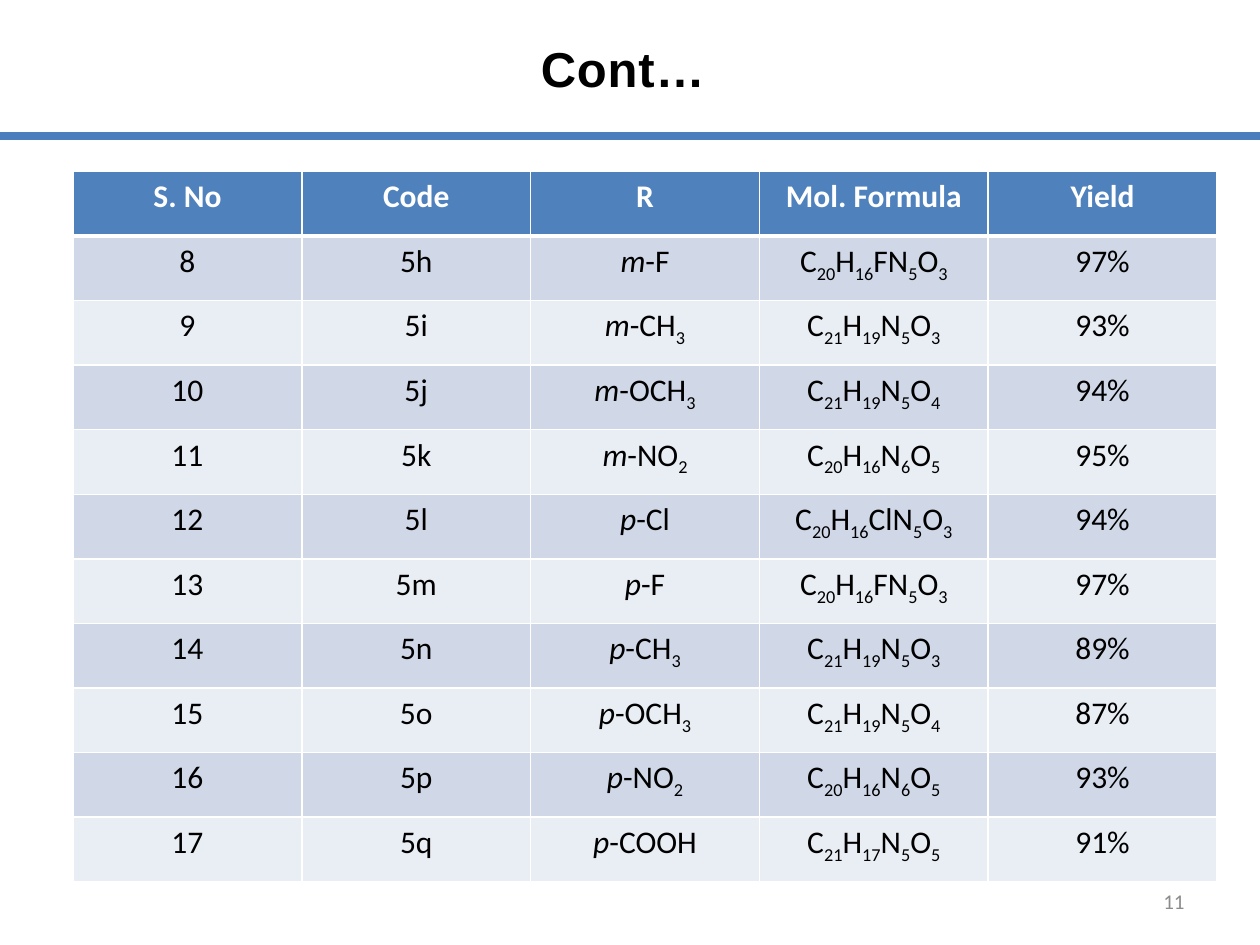
from itertools import groupby

from lxml import etree
from pptx import Presentation
from pptx.dml.color import RGBColor
from pptx.enum.shapes import MSO_CONNECTOR
from pptx.enum.text import MSO_ANCHOR, PP_ALIGN
from pptx.oxml import parse_xml
from pptx.oxml.ns import nsdecls, qn
from pptx.util import Inches, Pt

CENTER, RIGHT = PP_ALIGN.CENTER, PP_ALIGN.RIGHT
TOP, MIDDLE = MSO_ANCHOR.TOP, MSO_ANCHOR.MIDDLE
STRAIGHT = MSO_CONNECTOR.STRAIGHT

BLACK, WHITE, GREY = "000000", "FFFFFF", "8C8C8C"
RULE_BLUE, HEADER_BLUE = "4B7EBC", "4F81BD"
BANDS = ("D0D8E8", "E9EDF4")

HEADINGS = ("S. No", "Code", "R", "Mol. Formula", "Yield")
FIRST_NUMBER = 8
# Code, ring position, substituent, molecular formula, yield
COMPOUNDS = (
    ("5h", "m", "-F", "C20H16FN5O3", "97%"),
    ("5i", "m", "-CH3", "C21H19N5O3", "93%"),
    ("5j", "m", "-OCH3", "C21H19N5O4", "94%"),
    ("5k", "m", "-NO2", "C20H16N6O5", "95%"),
    ("5l", "p", "-Cl", "C20H16ClN5O3", "94%"),
    ("5m", "p", "-F", "C20H16FN5O3", "97%"),
    ("5n", "p", "-CH3", "C21H19N5O3", "89%"),
    ("5o", "p", "-OCH3", "C21H19N5O4", "87%"),
    ("5p", "p", "-NO2", "C20H16N6O5", "93%"),
    ("5q", "p", "-COOH", "C21H17N5O5", "91%"),
)


def rgb(color):
    return RGBColor.from_string(color)


def add_run(paragraph, text, size, color, font="Calibri", bold=False,
            italic=False, subscript=False):
    run = paragraph.add_run()
    run.text = text
    run.font.size, run.font.name = Pt(size), font
    run.font.bold, run.font.italic = bold, italic
    run.font.color.rgb = rgb(color)
    if subscript:
        run.font._element.set("baseline", "-25000")
    return run


def add_formula(paragraph, formula):
    """Write a formula with its digits as subscripts."""
    for is_digit, letters in groupby(formula, str.isdigit):
        add_run(paragraph, "".join(letters), 18, BLACK, subscript=is_digit)


def add_text_line(slide, box, align, anchor):
    """Add a text box and return its one paragraph."""
    frame = slide.shapes.add_textbox(*map(Inches, box)).text_frame
    frame.word_wrap = True
    frame.vertical_anchor = anchor
    frame.paragraphs[0].alignment = align
    return frame.paragraphs[0]


def add_title(slide, box):
    run = add_run(add_text_line(slide, box, CENTER, TOP), "Cont… ", 28, BLACK,
                  font="Arial", bold=True)
    properties = run.font._element
    properties.set("spc", "50")
    # Soft shadow below the letters
    shadow = parse_xml(
        f'<a:effectLst {nsdecls("a")}><a:outerShdw blurRad="38100" dist="38100" '
        'dir="5400000"><a:srgbClr val="000000"><a:alpha val="40000"/>'
        '</a:srgbClr></a:outerShdw></a:effectLst>')
    properties.find(qn("a:solidFill")).addnext(shadow)


def add_rule(slide, left, top, width):
    rule = slide.shapes.add_connector(
        STRAIGHT, Inches(left), Inches(top), Inches(left + width), Inches(top))
    rule.line.color.rgb = rgb(RULE_BLUE)
    rule.line.width = Pt(4.5)
    etree.SubElement(rule._element.spPr, qn("a:effectLst"))


def style_cell(cell, fill, top=1, bottom=1):
    """Draw white borders, then the fill, which must follow them in the XML."""
    properties = cell._tc.get_or_add_tcPr()
    for side, width in (("L", 1), ("R", 1), ("T", top), ("B", bottom)):
        properties.append(parse_xml(
            f'<a:ln{side} {nsdecls("a")} w="{Pt(width)}"><a:solidFill>'
            f'<a:srgbClr val="{WHITE}"/></a:solidFill></a:ln{side}>'))
    cell.fill.solid()
    cell.fill.fore_color.rgb = rgb(fill)


def add_compound_table(slide, box):
    left, top, width, height = map(Inches, box)
    row_count, column_count = len(COMPOUNDS) + 1, len(HEADINGS)
    table = slide.shapes.add_table(
        row_count, column_count, left, top, width, height).table
    for column in table.columns:
        column.width = width // column_count
    for row in table.rows:
        row.height = height // row_count

    # Header row
    for cell, heading in zip(table.rows[0].cells, HEADINGS):
        style_cell(cell, HEADER_BLUE, bottom=3)
        add_run(cell.text_frame.paragraphs[0], heading, 18, WHITE, bold=True)

    # One banded row for each compound
    for index, (code, position, group, formula, percent) in enumerate(COMPOUNDS):
        cells = list(table.rows[index + 1].cells)
        for cell in cells:
            style_cell(cell, BANDS[index % 2], top=1 if index else 3)
        number_p, code_p, group_p, formula_p, yield_p = (
            cell.text_frame.paragraphs[0] for cell in cells)
        add_run(number_p, str(FIRST_NUMBER + index), 18, BLACK)
        add_run(code_p, code, 18, BLACK)
        add_run(group_p, position, 18, BLACK, italic=True)
        add_formula(group_p, group)
        add_formula(formula_p, formula)
        add_run(yield_p, percent, 18, BLACK)

    for cell in table.iter_cells():
        cell.text_frame.paragraphs[0].alignment = CENTER


def add_page_number(slide, box):
    add_run(add_text_line(slide, box, RIGHT, MIDDLE), "11", 12, GREY)


def main():
    presentation = Presentation()
    presentation.slide_width, presentation.slide_height = Inches(10), Inches(7.5)
    slide = presentation.slides.add_slide(presentation.slide_layouts[6])
    add_rule(slide, 0, 1.08, 10)
    add_title(slide, (0, 0.26, 10, 0.57))
    add_compound_table(slide, (0.58, 1.36, 9.08, 5.64))
    add_page_number(slide, (7.17, 6.95, 2.33, 0.4))
    presentation.save("out.pptx")


if __name__ == "__main__":
    main()
